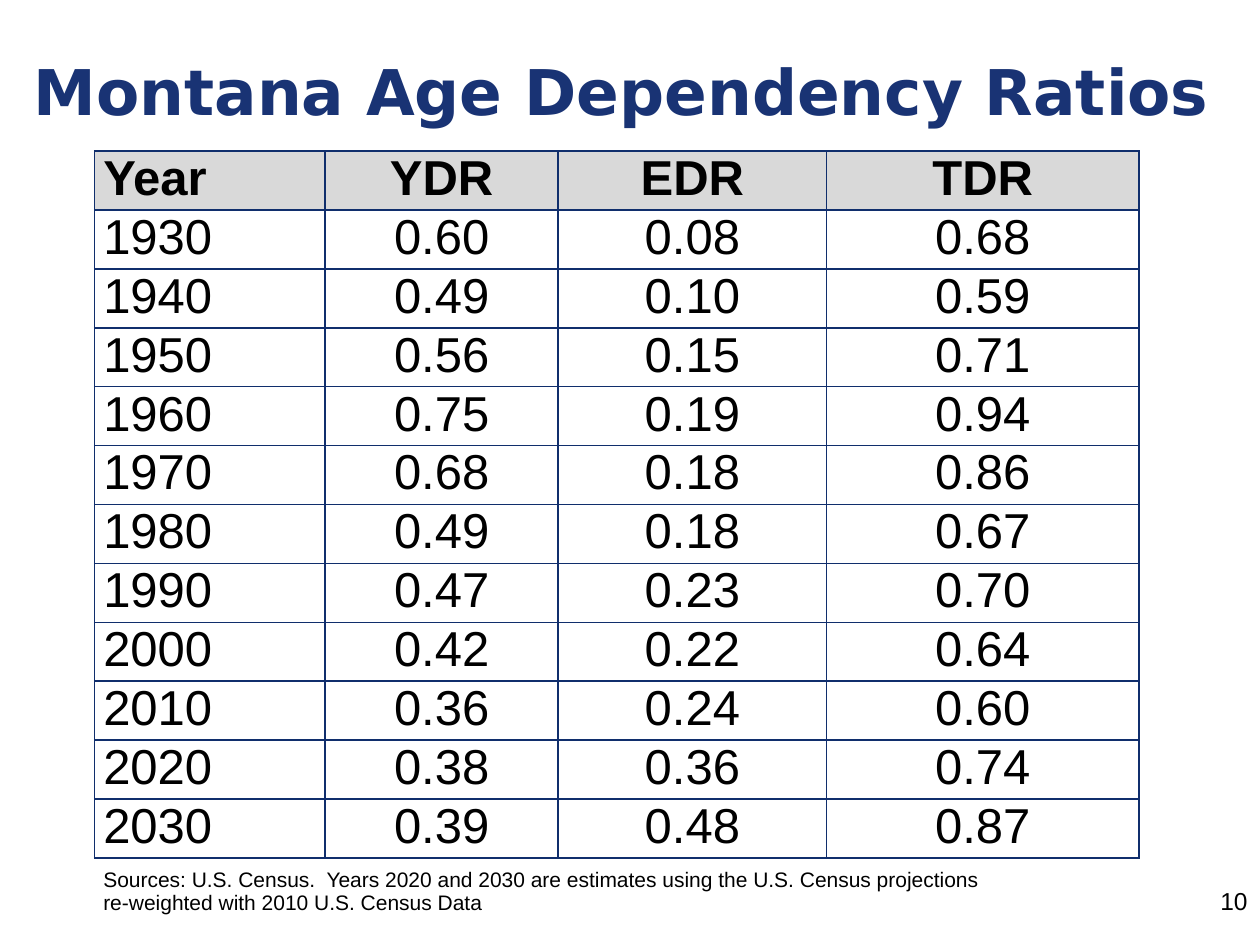
from lxml.etree import SubElement
from pptx import Presentation
from pptx.dml.color import RGBColor
from pptx.enum.text import MSO_ANCHOR, PP_ALIGN
from pptx.oxml.ns import qn
from pptx.util import Inches, Pt

HEADS = ["Year", "YDR", "EDR", "TDR"]
RATIOS = [
    ["1930", "0.60", "0.08", "0.68"],
    ["1940", "0.49", "0.10", "0.59"],
    ["1950", "0.56", "0.15", "0.71"],
    ["1960", "0.75", "0.19", "0.94"],
    ["1970", "0.68", "0.18", "0.86"],
    ["1980", "0.49", "0.18", "0.67"],
    ["1990", "0.47", "0.23", "0.70"],
    ["2000", "0.42", "0.22", "0.64"],
    ["2010", "0.36", "0.24", "0.60"],
    ["2020", "0.38", "0.36", "0.74"],
    ["2030", "0.39", "0.48", "0.87"],
]
SOURCE = ("Sources: U.S. Census.  Years 2020 and 2030 are estimates using "
          "the U.S. Census projections\vre-weighted with 2010 U.S. Census Data")
WIDTHS = [1.83, 1.85, 2.13, 2.48]
GRID_H, NOTE_H = 5.61, 0.54


def color(code):
    return RGBColor.from_string(code)


class Page:
    font, ink, navy, gray = "Arial", "000000", "193374", "D9D9D9"
    rule = "102E6C"

    def __init__(self, slide):
        self.slide = slide

    def words(self, frame, text, size, align=PP_ALIGN.LEFT, bold=False,
              font=None, ink=None):
        """Fill a text frame with one styled paragraph."""
        para = frame.paragraphs[0]
        para.text = text
        para.alignment = align
        for run in para.runs:
            run.font.size = Pt(size)
            run.font.bold = bold
            run.font.name = font or self.font
            run.font.color.rgb = color(ink or self.ink)

    def label(self, box, text, size, anchor=MSO_ANCHOR.TOP, **style):
        frame = self.slide.shapes.add_textbox(*map(Inches, box)).text_frame
        frame.word_wrap = True
        frame.vertical_anchor = anchor
        self.words(frame, text, size, **style)

    def border(self, cell, sides):
        """Rule the named sides (of L, R, T, B) and clear the others."""
        props = cell._tc.get_or_add_tcPr()
        for side in "LRTB":
            line = SubElement(props, qn("a:ln" + side), w=str(Pt(1)))
            if side in sides:
                fill = SubElement(line, qn("a:solidFill"))
                SubElement(fill, qn("a:srgbClr"), val=self.rule)
            else:
                SubElement(line, qn("a:noFill"))

    def cell(self, cell, text, size, sides="LRTB", fill=None, **style):
        cell.margin_left = cell.margin_right = Inches(0.07)
        cell.margin_top = cell.margin_bottom = 0
        self.border(cell, sides)
        if fill:
            cell.fill.solid()
            cell.fill.fore_color.rgb = color(fill)
        else:
            cell.fill.background()
        self.words(cell.text_frame, text, size, **style)

    def table(self, left, top, rows, note):
        """Draw a header row, data rows and a merged note row."""
        count = len(rows)
        grid = self.slide.shapes.add_table(
            count + 1, len(WIDTHS), Inches(left), Inches(top),
            Inches(sum(WIDTHS)), Inches(GRID_H + NOTE_H)).table
        grid.horz_banding = False
        for col, width in zip(grid.columns, WIDTHS):
            col.width = Inches(width)
        for r, row in enumerate(rows):
            grid.rows[r].height = Inches(GRID_H / count)
            for c, text in enumerate(row):
                self.cell(grid.cell(r, c), text, 28, bold=r == 0,
                          fill=None if r else self.gray,
                          align=PP_ALIGN.CENTER if c else PP_ALIGN.LEFT)
        grid.rows[count].height = Inches(NOTE_H)
        for c in range(len(WIDTHS)):
            foot = grid.cell(count, c)
            self.cell(foot, "" if c else note, 12, sides="T")
        first = grid.cell(count, 0)
        first.merge(foot)
        first.vertical_anchor = MSO_ANCHOR.MIDDLE
        first.text_frame.paragraphs[0].space_after = Pt(6)


def main():
    deck = Presentation()
    deck.slide_width, deck.slide_height = Inches(10), Inches(7.5)
    page = Page(deck.slides.add_slide(deck.slide_layouts[6]))
    page.label((0.17, 0.18, 9.67, 1.08), "Montana Age Dependency Ratios", 36,
               anchor=MSO_ANCHOR.MIDDLE, bold=True, font="DejaVu Sans",
               ink=page.navy)
    page.table(0.75, 1.2, [HEADS] + RATIOS, SOURCE)
    page.label((9.52, 6.98, 0.48, 0.52), "10", 14, align=PP_ALIGN.RIGHT)
    deck.save("out.pptx")


if __name__ == "__main__":
    main()
